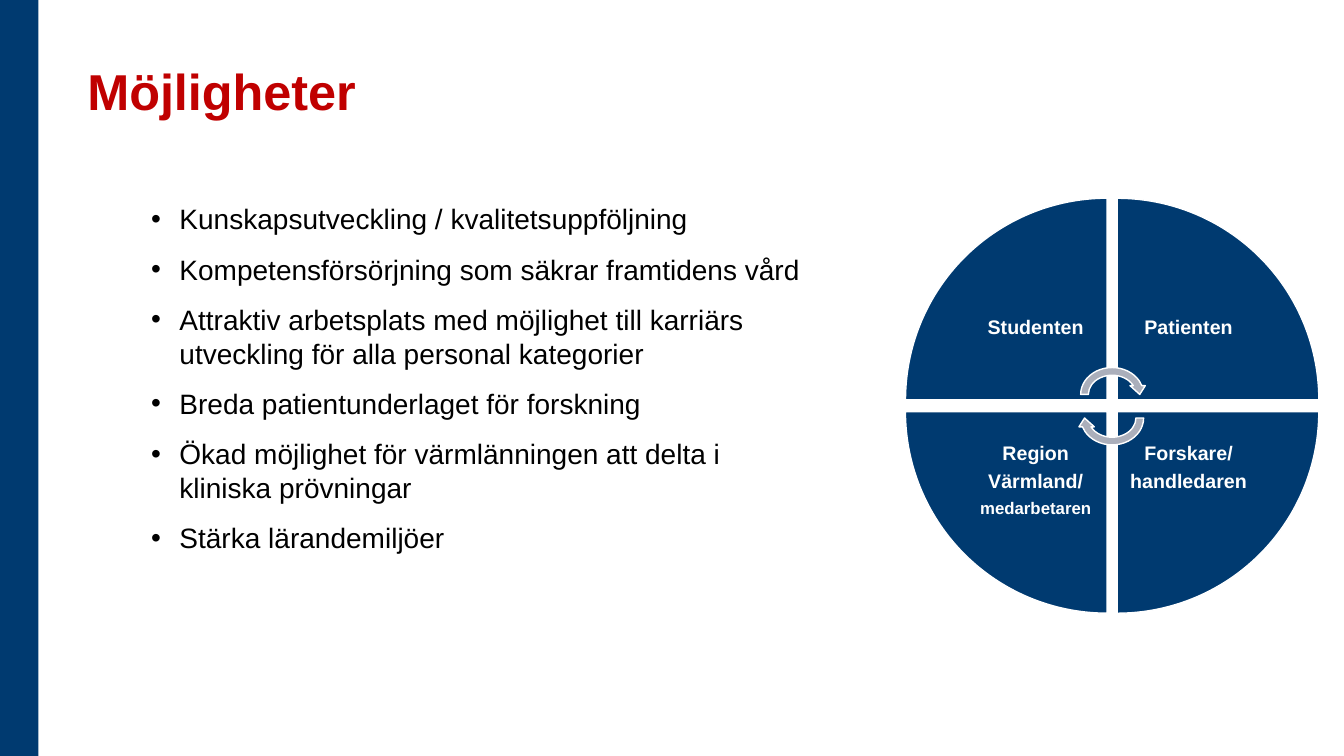
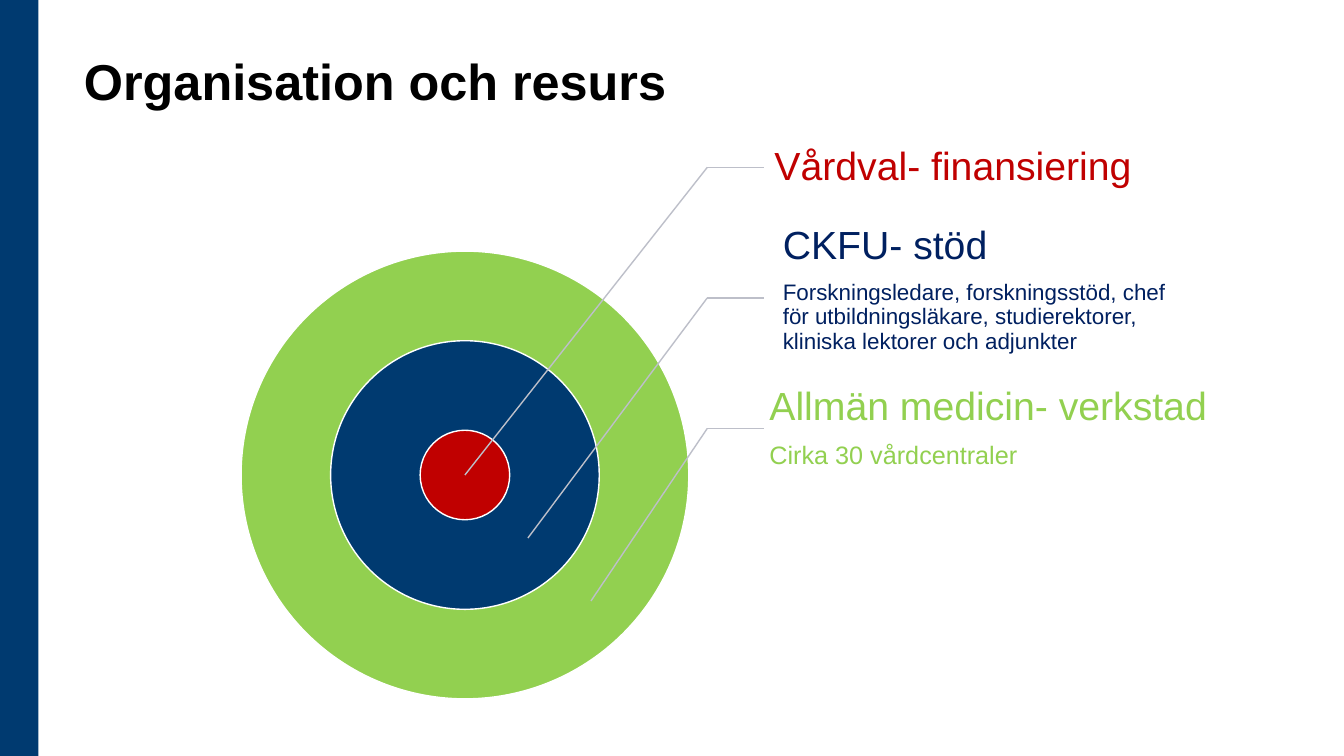
from dataclasses import dataclass
from lxml.etree import SubElement
from pptx import Presentation
from pptx.dml.color import RGBColor as Rgb
from pptx.enum.shapes import MSO_CONNECTOR as Link, MSO_SHAPE as Kind
from pptx.enum.text import MSO_ANCHOR as Anchor, PP_ALIGN as Align
from pptx.oxml.ns import qn
from pptx.util import Inches, Pt


@dataclass(frozen=True)
class Theme:
    font: str = "Arial"
    navy: str = "003A70"
    ink: str = "002060"
    red: str = "C00000"
    green: str = "92D050"
    black: str = "000000"
    white: str = "FFFFFF"
    grey: str = "ABAFBB"
    pale: str = "BDBFC9"
    title: int = 36
    head: int = 28
    body: int = 20
    sub: int = 18
    note: int = 16
    label: int = 14
    small: int = 12


T = Theme()
COLS, ROWS = 80, 45
WIDE, HIGH = Inches(13.33), Inches(7.5)


def place(x, y, w, h):
    col, row = WIDE / COLS, HIGH / ROWS
    return round(x * col), round(y * row), round(w * col), round(h * row)


def shape(slide, kind, box, fill, line=None, turn=0):
    item = slide.shapes.add_shape(kind, *place(*box))
    item.shadow.inherit = False
    item.fill.solid()
    item.fill.fore_color.rgb = Rgb.from_string(fill)
    if line:
        item.line.color.rgb = Rgb.from_string(line)
        item.line.width = Pt(1)
    else:
        item.line.fill.background()
    item.rotation = turn
    return item


def bullet(para, indent):
    props = para._p.get_or_add_pPr()
    props.set("marL", str(Inches(indent)))
    props.set("indent", str(-Inches(indent)))
    SubElement(props, qn("a:buFont"), typeface=T.font)
    SubElement(props, qn("a:buChar"), char="•")


def text(slide, box, lines, size=T.body, color=T.black, bold=False, align=Align.LEFT,
         anchor=Anchor.TOP, pitch=1.0, before=0, after=0, indent=0):
    frame = slide.shapes.add_textbox(*place(*box)).text_frame
    frame.word_wrap = True
    frame.vertical_anchor = anchor
    frame.margin_left = frame.margin_right = frame.margin_top = frame.margin_bottom = 0
    for i, line in enumerate(lines):
        words, points = line if isinstance(line, tuple) else (line, size)
        para = frame.paragraphs[0] if i == 0 else frame.add_paragraph()
        para.alignment = align
        para.line_spacing = pitch
        para.space_before = Pt(before if i else 0)
        para.space_after = Pt(round(points * after))
        if indent:
            bullet(para, indent)
        run = para.add_run()
        run.text = words
        font = run.font
        font.name, font.size, font.bold = T.font, Pt(points), bold
        font.color.rgb = Rgb.from_string(color)


def line(slide, start, end):
    item = slide.shapes.add_connector(
        Link.STRAIGHT, *place(*start, *end))
    item.line.color.rgb = Rgb.from_string(T.pale)
    item.line.width = Pt(1)
    SubElement(item._element.spPr, qn("a:effectLst"))


def base(deck, title, spot, color):
    slide = deck.slides.add_slide(deck.slide_layouts[6])
    shape(slide, Kind.RECTANGLE, (0, 0, 2.28, ROWS), T.navy)
    text(slide, (*spot, 47, 5), [title], size=T.title, color=color, bold=True)
    return slide


def wheel(slide, box, labels):
    x, y, w, h = box
    side, span = 12, 8.5
    spots = [(0, 0), (1, 0), (1, 1), (0, 1)]
    for i, ((col, row), words) in enumerate(zip(spots, labels)):
        left, top = x + col * (w - side), y + row * (h - side)
        shape(slide, Kind.PIE_WEDGE, (left, top, side, side), T.navy, T.white, 90 * i)
        inset = 0 if col else side - span
        drop = 1.9 if row else 7.1
        text(slide, (left + inset, top + drop, span, side - drop), words, size=T.label,
             color=T.white, bold=True, align=Align.CENTER, pitch=0.9, after=0.35)
    mid, hub = x + w / 2, y + h / 2
    for lift, turn in ((2.5, 0), (1.1, 180)):
        shape(slide, Kind.CIRCULAR_ARROW, (mid - 2.1, hub - lift, 4.2, 3.66),
              T.grey, T.white, turn)


def target(slide, box, fills):
    x, y, w, h = box
    for share, fill in zip((1, 0.6, 0.2), fills):
        gap = (1 - share) / 2
        ring = x + w * gap, y + h * gap, w * share, h * share
        shape(slide, Kind.OVAL, ring, fill, T.white)


def legend(slide, box, hub, notes):
    x, y, w, h = box
    row = h / len(notes)
    for i, (shift, lift, width, color, lines) in enumerate(notes):
        mid = y + row * (i + 0.5)
        tip = hub[0] + 3.75 * i, hub[1] + 3.75 * i
        elbow = x, mid
        line(slide, elbow, (x + 3.4, mid))
        line(slide, elbow, tip)
        text(slide, (x + shift, mid - row / 2 - lift, width, row), lines, color=color,
             anchor=Anchor.MIDDLE, pitch=0.9, after=0.35)


def chances(deck):
    slide = base(deck, "Möjligheter", (5.2, 3.6), T.red)
    wheel(slide, (53.9, 11.8, 24.6, 24.7), [
        ["Studenten"],
        ["Patienten"],
        ["Forskare/", "handledaren"],
        ["Region", "Värmland/", ("medarbetaren", T.small)],
    ])
    text(slide, (9, 12, 38.8, 21.2), [
        "Kunskapsutveckling / kvalitetsuppföljning",
        "Kompetensförsörjning som säkrar framtidens vård",
        "Attraktiv arbetsplats med möjlighet till karriärs utveckling för alla personal kategorier",
        "Breda patientunderlaget för forskning",
        "Ökad möjlighet för värmlänningen att delta i kliniska prövningar",
        "Stärka lärandemiljöer",
    ], before=12, indent=0.28)


def means(deck):
    slide = base(deck, "Organisation och resurs", (5, 3), T.black)
    x, y, side = 14.35, 14.95, 26.65
    target(slide, (x, y, side, side), (T.green, T.navy, T.red))
    legend(slide, (42.1, 6.08, 34, 23.31), (x + side / 2, y + side / 2), [
        (4, 0, 30, T.red, [("Vårdval- finansiering", T.head)]),
        (4.5, 0.5, 22.9, T.ink, [
            ("CKFU- stöd", T.head),
            ("Forskningsledare, forskningsstöd, chef för utbildningsläkare, "
             "studierektorer, kliniska lektorer och adjunkter", T.note)]),
        (3.7, 0, 30, T.green, [
            ("Allmän medicin- verkstad", T.head),
            ("Cirka 30 vårdcentraler", T.sub)]),
    ])


def main():
    deck = Presentation()
    deck.slide_width, deck.slide_height = WIDE, HIGH
    chances(deck)
    means(deck)
    deck.save("out.pptx")


if __name__ == "__main__":
    main()
